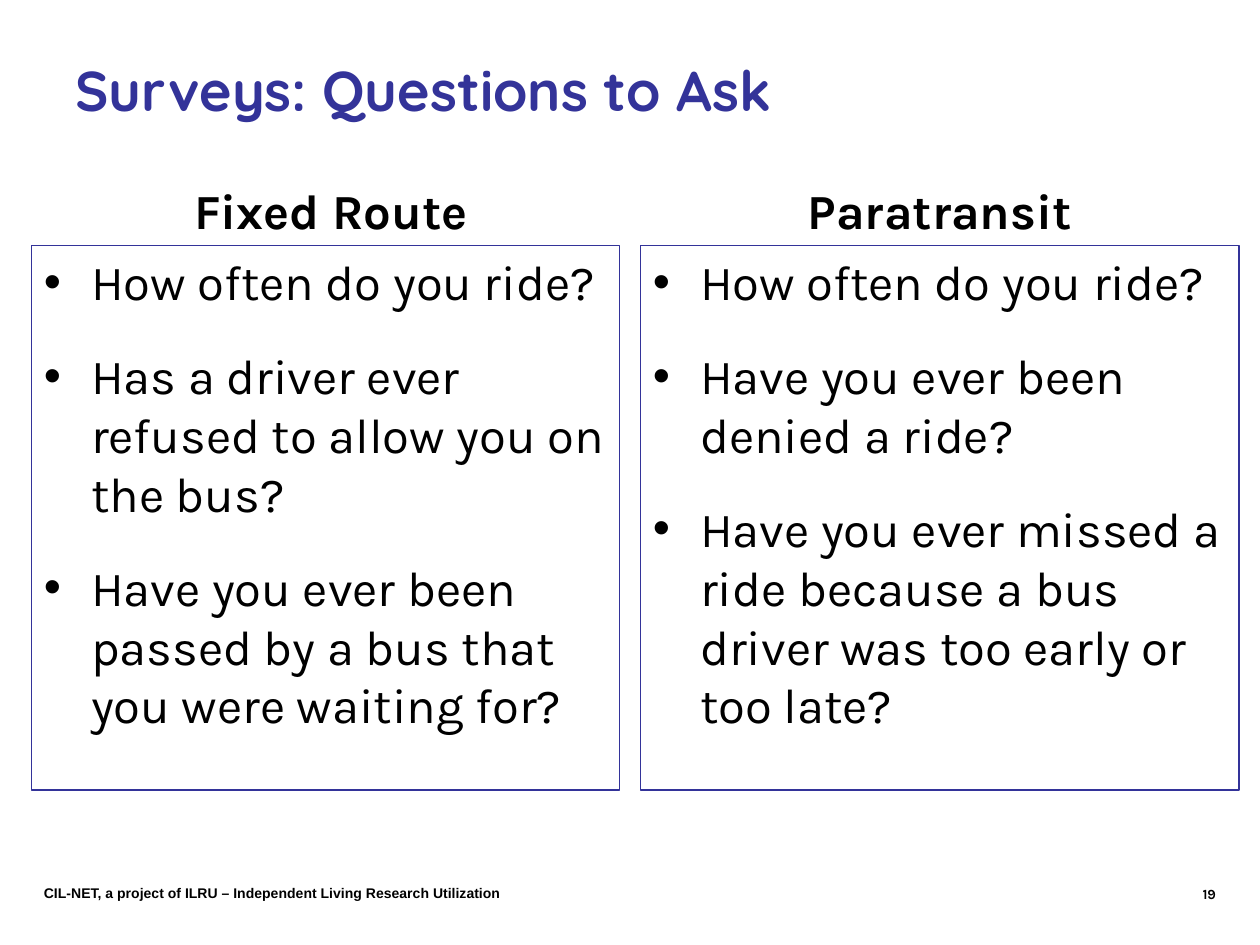
from pptx import Presentation
from pptx import util as u
from pptx.dml.color import RGBColor
from pptx.enum import shapes, text
from pptx.oxml.ns import qn
from lxml import etree

Pt = u.Pt
BLUE, BLACK = "333399", "000000"
INDENT = 27
COLUMNS = [
    # heading left, box left, box width, heading, questions
    (30, 18, 336, "Fixed Route", [
        "How often do you ride?",
        "Has a driver ever refused to allow you on the bus?",
        "Have you ever been passed by a bus that you were waiting for?"]),
    (378, 366, 342, "Paratransit", [
        "How often do you ride?",
        "Have you ever been denied a ride?",
        "Have you ever missed a ride because a bus driver was too early or too late?"]),
]


def rgb(color):
    return RGBColor.from_string(color)


def add_run(p, words, size, font="Karla", color=BLACK, bold=False):
    r = p.add_run()
    r.text = words
    r.font.size, r.font.name, r.font.bold = Pt(size), font, bold
    r.font.color.rgb = rgb(color)


def add_label(s, box, words, size, align=text.PP_ALIGN.LEFT,
              anchor=text.MSO_ANCHOR.TOP, **style):
    tf = s.shapes.add_textbox(*map(Pt, box)).text_frame
    tf.word_wrap = True
    tf.vertical_anchor = anchor
    p = tf.paragraphs[0]
    p.alignment = align
    add_run(p, words, size, bold=True, **style)


def add_bullet(p):
    pPr = p._p.get_or_add_pPr()
    pPr.set("marL", str(Pt(INDENT)))
    pPr.set("indent", str(-Pt(INDENT)))
    etree.SubElement(pPr, qn("a:buFont")).set("typeface", "Arial")
    etree.SubElement(pPr, qn("a:buChar")).set("char", "•")


def add_questions(s, box, questions):
    sp = s.shapes.add_shape(shapes.MSO_SHAPE.RECTANGLE, *map(Pt, box))
    sp.shadow.inherit = False
    sp.fill.background()
    sp.line.color.rgb = rgb(BLUE)
    sp.line.width = Pt(0.75)
    tf = sp.text_frame
    tf.word_wrap = True
    tf.vertical_anchor = text.MSO_ANCHOR.TOP
    for i, question in enumerate(questions):
        p = tf.paragraphs[0] if i == 0 else tf.add_paragraph()
        p.alignment = text.PP_ALIGN.LEFT
        if i:
            p.space_before = Pt(20)
        add_bullet(p)
        add_run(p, question, 28)


def add_footer(s, box):
    left, top, width, height = box
    add_label(s, (left, top, 360, height),
              "CIL-NET, a project of ILRU – Independent Living Research Utilization",
              8, font="Arial")
    add_label(s, (left + width - 186, top + 0.75, 186, height), "19", 8,
              align=text.PP_ALIGN.RIGHT)


def main():
    prs = Presentation()
    prs.slide_width, prs.slide_height = Pt(720), Pt(540)
    s = prs.slides.add_slide(prs.slide_layouts[6])

    # Title
    add_label(s, (36, 6, 648, 90), "Surveys: Questions to Ask", 32,
              anchor=text.MSO_ANCHOR.MIDDLE, font="Quicksand", color=BLUE)

    # Two columns of questions
    for head_left, left, width, heading, questions in COLUMNS:
        add_label(s, (head_left, 90, 318, 50.4), heading, 28,
                  align=text.PP_ALIGN.CENTER, anchor=text.MSO_ANCHOR.BOTTOM)
        add_questions(s, (left, 140.4, width, 311), questions)

    # Footer and slide number
    add_footer(s, (18, 501.8, 684, 17))
    prs.save("out.pptx")


if __name__ == "__main__":
    main()
